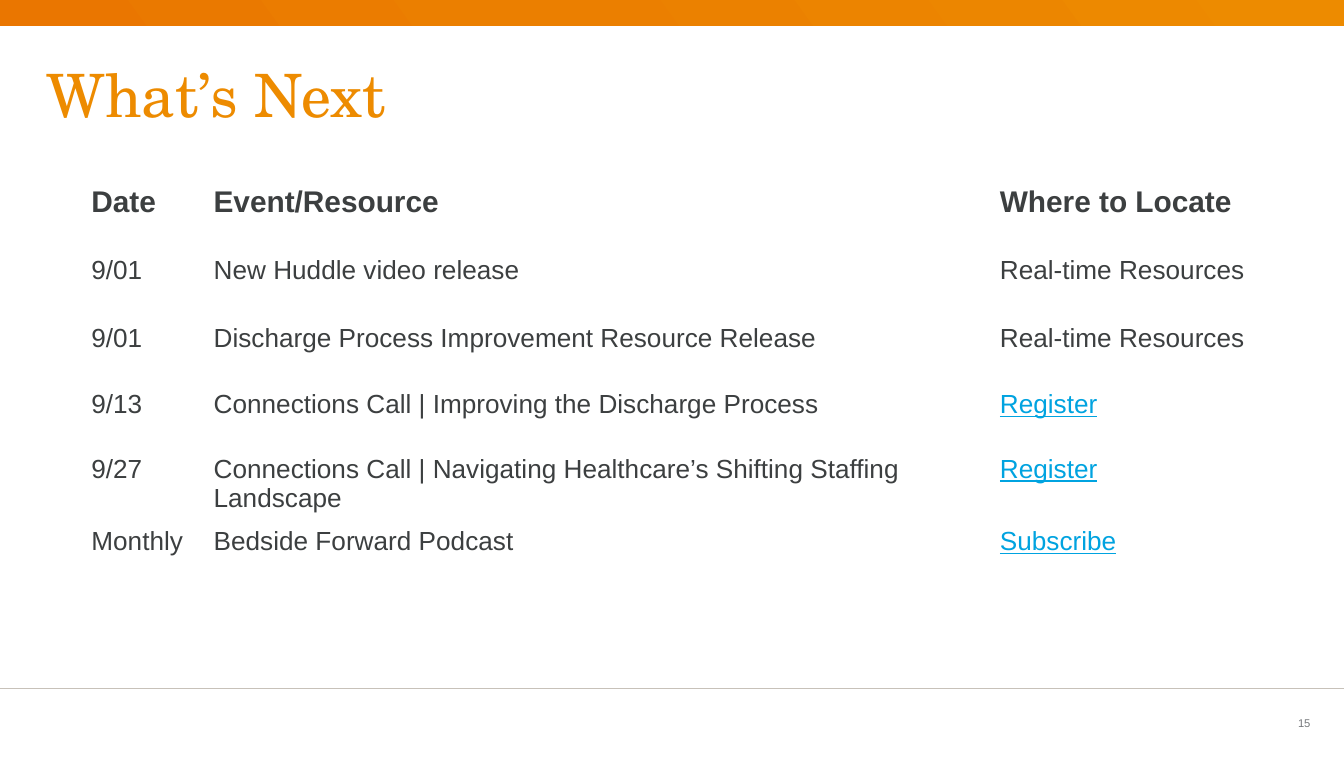
from copy import deepcopy
from typing import NamedTuple

from pptx import Presentation
from pptx.dml.color import RGBColor
from pptx.enum.shapes import MSO_CONNECTOR, MSO_SHAPE
from pptx.enum.text import MSO_ANCHOR as ANCHOR, PP_ALIGN as ALIGN
from pptx.oxml.ns import qn
from pptx.oxml.xmlchemy import OxmlElement
from pptx.util import Inches, Pt

ORANGE = RGBColor(0xED, 0x8B, 0x00)
MID_ORANGE = RGBColor(0xEB, 0x7F, 0x00)
DEEP_ORANGE = RGBColor(0xEA, 0x76, 0x00)
INK = RGBColor(0x3C, 0x3F, 0x40)
LINK = RGBColor(0x00, 0xA3, 0xE0)
GRAY = RGBColor(0x75, 0x78, 0x7B)
RULE = RGBColor(0xC7, 0xC1, 0xB9)


class Event(NamedTuple):
    date: str
    name: str
    where: str
    height: float
    linked: bool = False


HEADER = Event("Date", "Event/Resource", "Where to Locate", 0.52)
EVENTS = [
    Event("9/01", "New Huddle video release", "Real-time Resources", 0.51),
    Event("9/01", "Discharge Process Improvement Resource Release", "Real-time Resources", 0.49),
    Event("9/13", "Connections Call | Improving the Discharge Process", "Register", 0.48, True),
    Event("9/27", "Connections Call | Navigating Healthcare’s Shifting Staffing Landscape",
          "Register", 0.51, True),
    Event("Monthly", "Bedside Forward Podcast", "Subscribe", 0.51, True),
]
COLUMNS = [0.91, 5.85, 2.07]


def write(tf, text: str, *, size: float, color: RGBColor = INK, font: str = "Arial",
          bold: bool = False, underline: bool = False, align=ALIGN.LEFT) -> None:
    p = tf.paragraphs[0]
    p.alignment = align
    r = p.add_run()
    r.text = text
    r.font.name, r.font.size = font, Pt(size)
    r.font.bold, r.font.underline = bold, underline
    r.font.color.rgb = color


def add_text(slide, text: str, left: float, top: float, width: float, height: float, *,
             margins: tuple[float, float] = (0.1, 0.05), **style) -> None:
    sp = slide.shapes.add_textbox(Inches(left), Inches(top), Inches(width), Inches(height))
    tf = sp.text_frame
    tf.word_wrap = True
    tf.vertical_anchor = ANCHOR.MIDDLE
    tf.margin_left = tf.margin_right = Inches(margins[0])
    tf.margin_top = tf.margin_bottom = Inches(margins[1])
    write(tf, text, **style)


def add_banner(slide) -> None:
    sp = slide.shapes.add_shape(MSO_SHAPE.RECTANGLE, 0, 0, Inches(10), Inches(0.19))
    sp.shadow.inherit = False
    sp.line.fill.background()
    sp.fill.gradient()
    sp.fill.gradient_angle = 36
    stops = sp._element.spPr.find(qn("a:gradFill")).find(qn("a:gsLst"))
    stops.insert(1, deepcopy(stops[0]))
    colors = [(0.01, DEEP_ORANGE), (0.4, MID_ORANGE), (0.99, ORANGE)]
    for stop, (position, color) in zip(sp.fill.gradient_stops, colors):
        stop.position = position
        stop.color.rgb = color


def add_footer_rule(slide) -> None:
    line = slide.shapes.add_connector(
        MSO_CONNECTOR.STRAIGHT, Inches(10), Inches(5.12), 0, Inches(5.12))
    line.line.color.rgb = RULE
    line.line.width = Pt(0.75)
    line._element.spPr.append(OxmlElement("a:effectLst"))


def add_schedule(slide, rows: list[Event]) -> None:
    table = slide.shapes.add_table(
        len(rows), len(COLUMNS), Inches(0.58), Inches(1.33), Inches(sum(COLUMNS)),
        Inches(sum(row.height for row in rows))).table
    table.first_row = table.horz_banding = False
    for column, width in zip(table.columns, COLUMNS):
        column.width = Inches(width)
    for i, event in enumerate(rows):
        table.rows[i].height = Inches(event.height)
        for j, text in enumerate((event.date, event.name, event.where)):
            cell = table.cell(i, j)
            cell.fill.background()
            cell.margin_bottom = Inches(0.02)
            linked = event.linked and j == 2
            write(cell.text_frame, text, size=14 if i else 16, bold=i == 0,
                  color=LINK if linked else INK, underline=linked)


def main() -> None:
    """Build the slide of upcoming events and save it."""
    prs = Presentation()
    prs.slide_width, prs.slide_height = Inches(10), Inches(5.63)
    slide = prs.slides.add_slide(prs.slide_layouts[6])
    add_footer_rule(slide)
    add_banner(slide)
    add_text(slide, "15", 9.4, 5.23, 0.35, 0.3, margins=(0, 0),
             size=6, color=GRAY, align=ALIGN.RIGHT)
    add_text(slide, "What’s Next", 0.25, 0.32, 9.5, 0.75,
             size=32, color=ORANGE, font="TeX Gyre Schola")
    add_schedule(slide, [HEADER, *EVENTS])
    prs.save("out.pptx")


if __name__ == "__main__":
    main()
